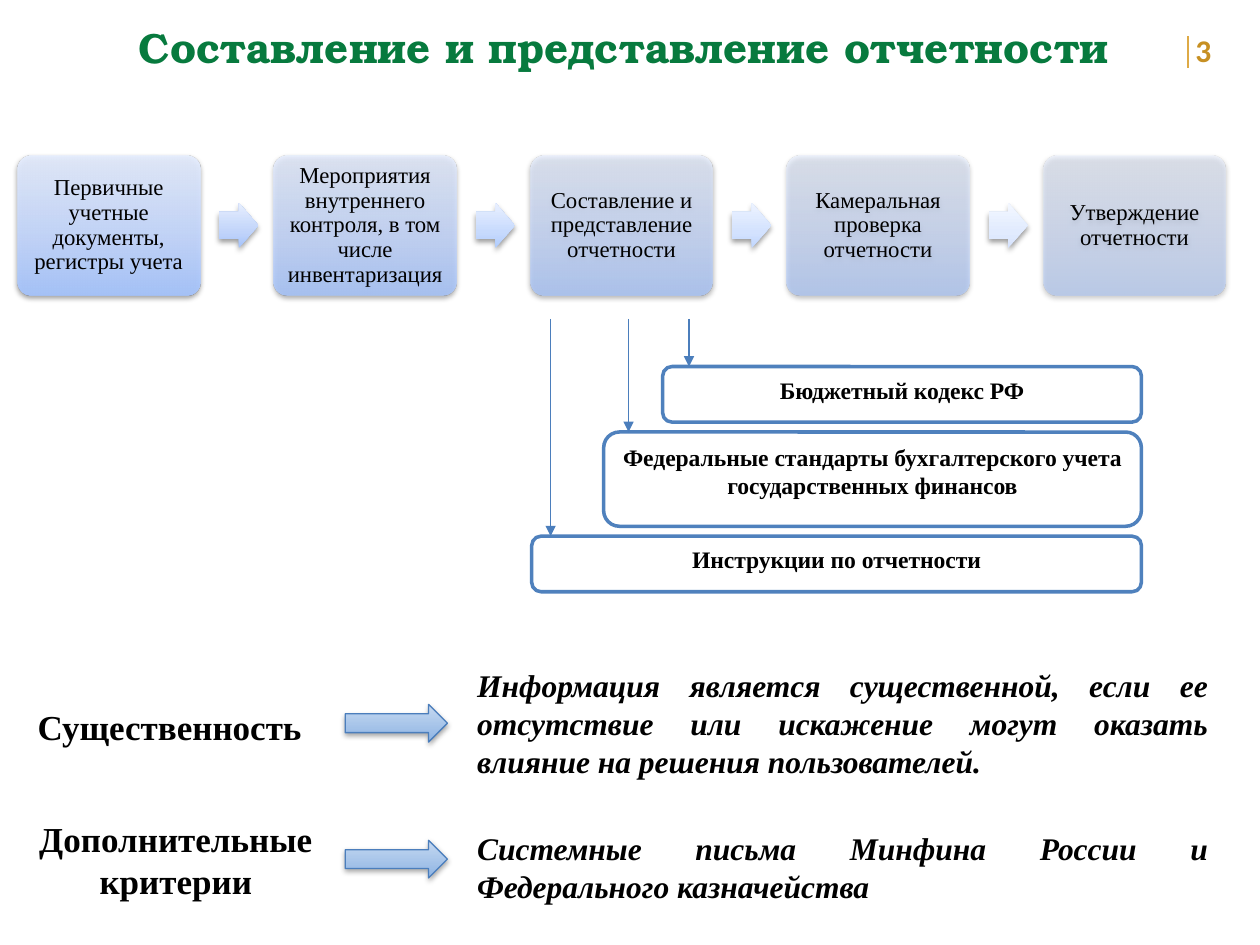
import pptx
import pptx.util
import pptx.dml.color
import pptx.enum.shapes
import pptx.enum.text
import pptx.oxml
import pptx.oxml.ns

COLORS = {
    "title": "077A3E", "number": "C79023", "rule": "DEAA46", "text": "000000",
    "white": "FFFFFF", "frame": "4F81BD", "line": "4B7EBC",
}
STEP_STOPS = [(0, "A4C4FF"), (35, "BFD4FF"), (100, "E6EEFF")]
CRITERION_STOPS = [(0, "8EB4E3"), (100, "C6D9F1")]
SERIF = "Times New Roman"
SHAPES = pptx.enum.shapes.MSO_SHAPE
ALIGN = pptx.enum.text.PP_ALIGN
ANCHOR = pptx.enum.text.MSO_ANCHOR


def color(name):
    return pptx.dml.color.RGBColor.from_string(COLORS[name])


def lengths(*values):
    return [pptx.util.Cm(value) for value in values]


def drawing_xml(tag, attributes="", content=""):
    namespace = pptx.oxml.ns.nsdecls("a")
    return pptx.oxml.parse_xml(f"<a:{tag} {namespace} {attributes}>{content}</a:{tag}>")


def write(shape, text, size, align, font=SERIF, tone="text", bold=True, italic=False):
    frame = shape.text_frame
    frame.word_wrap = True
    frame.vertical_anchor = ANCHOR.TOP
    paragraph = frame.paragraphs[0]
    paragraph.text = text
    paragraph.alignment = align
    run_font = paragraph.runs[0].font
    run_font.name, run_font.size = font, pptx.util.Pt(size)
    run_font.bold, run_font.italic = bold, italic
    run_font.color.rgb = color(tone)
    return paragraph


def add_text(slide, box, text, size, align, **style):
    shape = slide.shapes.add_textbox(*lengths(*box))
    return write(shape, text, size, align, **style)


def add_glossy_shape(slide, kind, box, stops, opacity=100, shadow=38):
    """Shape with a gradient rising from the bottom and a soft shadow below."""
    shape = slide.shapes.add_shape(kind, *lengths(*box))
    shape.line.fill.background()
    shape.fill.background()
    stop_xml = "".join(
        f'<a:gs pos="{position * 1000}"><a:srgbClr val="{tone}">'
        f'<a:alpha val="{opacity * 1000}"/></a:srgbClr></a:gs>'
        for position, tone in stops)
    gradient = drawing_xml(
        "gradFill", 'rotWithShape="1"',
        f'<a:gsLst>{stop_xml}</a:gsLst><a:lin ang="16200000" scaled="0"/>')
    properties = shape._element.spPr
    properties.replace(properties.find(pptx.oxml.ns.qn("a:noFill")), gradient)
    blur, distance = pptx.util.Pt(3.1), pptx.util.Pt(1.6)
    properties.append(drawing_xml(
        "effectLst", content=f'<a:outerShdw blurRad="{int(blur)}" dist="{int(distance)}" '
        'dir="5400000" rotWithShape="0"><a:srgbClr val="000000">'
        f'<a:alpha val="{shadow * 1000}"/></a:srgbClr></a:outerShdw>'))
    return shape


def add_line(slide, x1, y1, x2, y2, tone, width, arrow=False):
    line = slide.shapes.add_connector(
        pptx.enum.shapes.MSO_CONNECTOR.STRAIGHT, *lengths(x1, y1, x2, y2))
    line.line.color.rgb = color(tone)
    line.line.width = pptx.util.Pt(width)
    properties = line._element.spPr
    if arrow:
        outline = properties.find(pptx.oxml.ns.qn("a:ln"))
        outline.append(drawing_xml("tailEnd", 'type="triangle"'))
    properties.append(drawing_xml("effectLst"))


def add_header(slide, left, top, width):
    paragraph = add_text(slide, (left + 2.08, top, 20.85, 1.27),
                         "Составление и представление отчетности", 24, ALIGN.CENTER,
                         font="TeX Gyre Bonum", tone="title")
    paragraph._p.get_or_add_pPr().set("marL", str(int(pptx.util.Cm(0.15))))
    # Page number with its rule
    number_left = left + width - 1.55
    add_text(slide, (number_left, top + 0.2, 1.55, 1.02), "3", 18, ALIGN.LEFT,
             font="Calibri", tone="number")
    rule = number_left + 0.1
    add_line(slide, rule, top + 0.43, rule, top + 1.07, "rule", 1)


def add_process(slide, left, top, width, height):
    steps = [
        "Первичные учетные документы, регистры учета",
        "Мероприятия внутреннего контроля, в том числе инвентаризация",
        "Составление и представление отчетности",
        "Камеральная проверка отчетности",
        "Утверждение отчетности",
    ]
    arrow_stops = [
        ("A5C3FA", "C1D4FA", "E6EEFE"), ("B0CCFD", "C7DAFD", "E9F0FF"),
        ("C1D6FE", "D3E2FE", "EDF3FF"), ("D6E3FE", "E1EBFE", "F3F7FF"),
    ]
    step_width, arrow_width, arrow_height = 3.68, 0.79, 0.91
    pitch = (width - step_width) / (len(steps) - 1)
    for index, text in enumerate(steps):
        x = left + index * pitch
        step = add_glossy_shape(slide, SHAPES.ROUNDED_RECTANGLE, (x, top, step_width, height),
                                STEP_STOPS, opacity=90 - 10 * index)
        step.adjustments[0] = 0.1
        write(step, text, 13, ALIGN.CENTER, bold=False).line_spacing = 0.9
        frame = step.text_frame
        frame.vertical_anchor = ANCHOR.MIDDLE
        frame.margin_left = frame.margin_right = pptx.util.Cm(0.13)
        frame.margin_top = frame.margin_bottom = pptx.util.Cm(0.13)
        # Arrow to the next step
        if index < len(arrow_stops):
            box = (x + 4.07, top + (height - arrow_height) / 2, arrow_width, arrow_height)
            arrow = add_glossy_shape(slide, SHAPES.RIGHT_ARROW, box,
                                     list(zip((0, 35, 100), arrow_stops[index])))
            arrow.adjustments[0] = 0.6


def add_regulations(slide, left, top, width):
    # Text, indent, height, arrow offset from the left edge of the frame
    regulations = [
        ("Бюджетный кодекс РФ", 2.64, 1.12, 0.53),
        ("Федеральные стандарты бухгалтерского учета государственных финансов", 1.45, 1.9, 0.5),
        ("Инструкции по отчетности", 0, 1.12, 0.38),
    ]
    y, gap = top + 0.96, 0.2
    for text, indent, height, offset in regulations:
        x = left + indent
        frame = slide.shapes.add_shape(SHAPES.ROUNDED_RECTANGLE,
                                       *lengths(x, y, width - indent, height))
        frame.shadow.inherit = False
        frame.fill.solid()
        frame.fill.fore_color.rgb = color("white")
        frame.line.color.rgb = color("frame")
        frame.line.width = pptx.util.Pt(2)
        write(frame, text, 13.5, ALIGN.CENTER)
        add_line(slide, x + offset, top, x + offset, y, "line", 0.75, arrow=True)
        y += height + gap


def add_criterion(slide, left, top, label, label_drop, label_align, arrow_drop, text, text_drop):
    add_text(slide, (left, top + label_drop, 6.07, 1.12), label, 20, label_align)
    arrow = add_glossy_shape(slide, SHAPES.RIGHT_ARROW, (left + 6.45, top + arrow_drop, 2.06, 0.76),
                             CRITERION_STOPS, shadow=35)
    arrow.line.color.rgb = color("line")
    arrow.line.width = pptx.util.Pt(0.75)
    add_text(slide, (left + 8.86, top + text_drop, 15.24, 1.8), text, 18, ALIGN.JUSTIFY,
             italic=True)


def main():
    presentation = pptx.Presentation()
    presentation.slide_width, presentation.slide_height = lengths(25.4, 19.05)
    slide = presentation.slides.add_slide(presentation.slide_layouts[6])
    add_header(slide, 0, 0.3, 25.4)
    add_process(slide, 0.35, 3.13, 24.36, 2.83)
    add_regulations(slide, 10.72, 6.43, 12.29)
    add_criterion(slide, 0.51, 13.31, "Существенность", 0.79, ALIGN.JUSTIFY, 0.89,
                  "Информация является существенной, если ее отсутствие или искажение "
                  "могут оказать влияние на решения пользователей.", 0)
    add_criterion(slide, 0.51, 16.36, "Дополнительные критерии", 0, ALIGN.CENTER, 0.58,
                  "Системные письма Минфина России и Федерального казначейства", 0.23)
    presentation.save("out.pptx")


if __name__ == "__main__":
    main()
